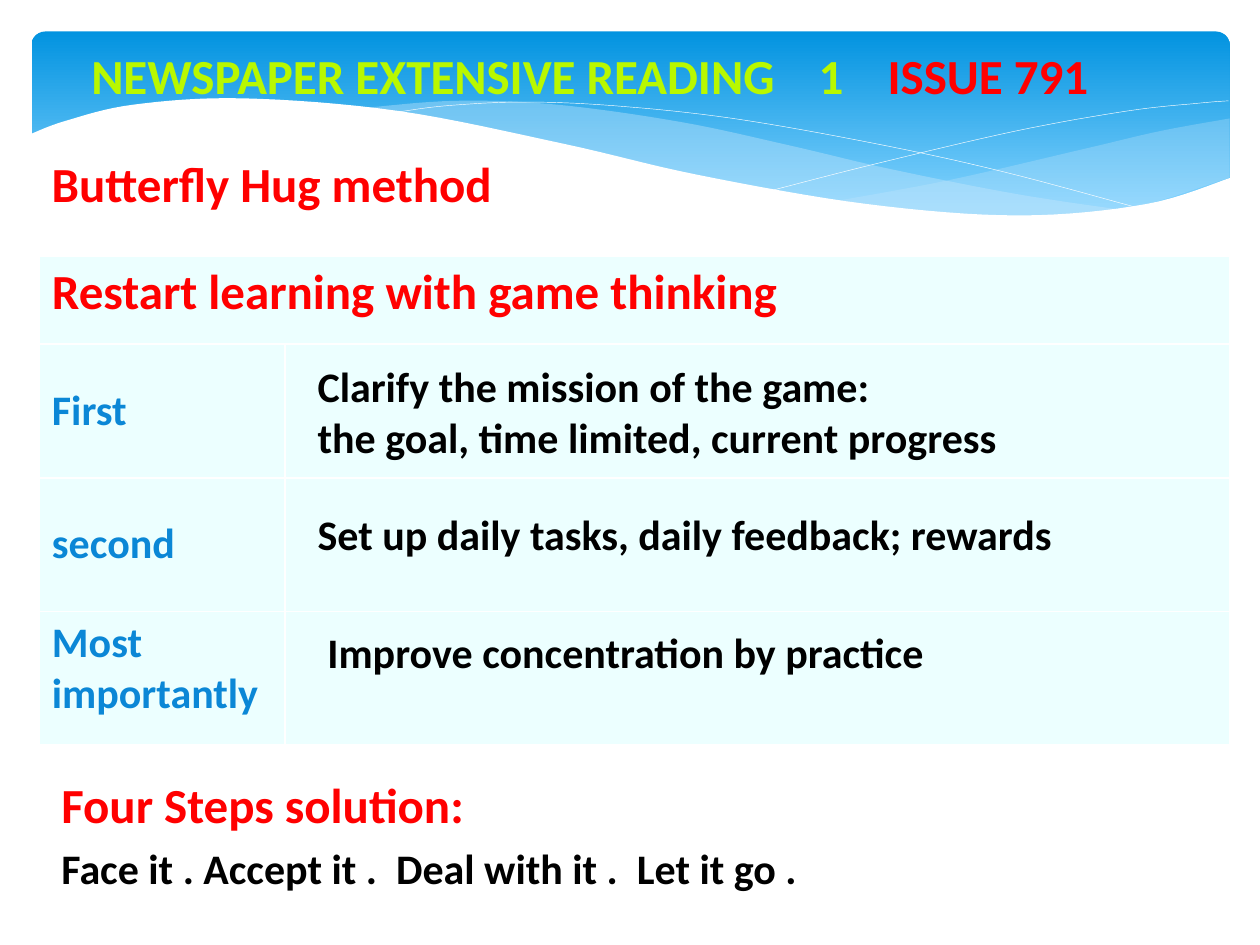
from dataclasses import dataclass

from lxml.etree import SubElement
from pptx import Presentation
from pptx.dml.color import RGBColor
from pptx.enum.shapes import MSO_SHAPE
from pptx.enum.text import MSO_ANCHOR, PP_ALIGN
from pptx.oxml import parse_xml
from pptx.oxml.ns import nsdecls, qn
from pptx.util import Pt


@dataclass(frozen=True)
class Theme:
    font: str = "Calibri"
    heading: int = 28
    body: int = 24
    red: str = "FF0000"
    lime: str = "B9F800"
    blue: str = "0B87D6"
    black: str = "000000"
    white: str = "FFFFFF"
    sky_top: str = "0293E0"
    sky_bottom: str = "83D3FE"
    wave: str = "C6E7FC"
    cell: str = "CCFFFF"


THEME = Theme()

# Knots of the banner's curves, in points
FAR_TOP = [(702.7, 67.7), (663, 74.9), (620, 85), (542, 103), (476, 115.2)]
FAR_BOTTOM = [(476, 115.2), (527, 121), (586, 123.8), (646, 118.8), (702.7, 101.5)]
MIDDLE_TOP = [(643, 120.2), (581, 110.9), (508.3, 96.5), (452.9, 83.5),
              (389.5, 69.8), (318.2, 59.8), (260, 57.6), (205.9, 61.9)]
MIDDLE_BOTTOM = [(205.9, 61.9), (260.6, 69.8), (323.3, 83.5), (407.5, 103),
                 (478.8, 115.9), (547.9, 123.1), (596.2, 124.6), (643, 120.2)]
FALLING_LINE = [(222.5, 64.8), (254.2, 60.5), (299.5, 58.3), (352, 60.5),
                (419, 67.7), (500.4, 82.1), (572.4, 97.9), (653, 119.5)]
RISING_LINE = [(441.4, 108.7), (500.4, 93.6), (580.3, 74.9),
               (644.4, 63.4), (684.7, 59), (702, 57.6)]
FRONT_EDGE = [(703.4, 101.5), (655, 116.6), (582.5, 123.1), (495.4, 116.6),
              (399.6, 100.1), (321.8, 82.1), (227.5, 63.4), (139, 56.2),
              (76.3, 59.8), (37.4, 69.1), (16.6, 77)]
FRONT_BASE = [(16.6, 161), (703.4, 161)]


def smooth(knots, steps=8):
    """Points on a Catmull-Rom curve through the knots."""
    ends = [knots[0], *knots, knots[-1]]
    points = []
    for a, b, c, d in zip(ends, ends[1:], ends[2:], ends[3:]):
        for step in range(steps):
            t = step / steps
            points.append(tuple(
                q + t * ((r - p) + t * ((2 * p - 5 * q + 4 * r - s)
                         + t * (3 * q - p - 3 * r + s))) / 2
                for p, q, r, s in zip(a, b, c, d)))
    return points + [knots[-1]]


def set_fill(fill, color, opacity=100):
    fill.solid()
    fill.fore_color.rgb = RGBColor.from_string(color)
    if opacity < 100:
        # The colour element is the last one in its parent's solid fill
        color_element = fill._xPr.find(qn("a:solidFill"))[0]
        SubElement(color_element, qn("a:alpha"), val=str(opacity * 1000))


def add_curve(page, points, fill=None, opacity=100, line=None):
    corners = [(Pt(x), Pt(y)) for x, y in points]
    builder = page.shapes.build_freeform(*corners[0], scale=1.0)
    builder.add_line_segments(corners[1:], close=fill is not None)
    curve = builder.convert_to_shape()
    curve.shadow.inherit = False
    if fill:
        set_fill(curve.fill, fill, opacity)
    else:
        curve.fill.background()
    if line:
        curve.line.color.rgb = RGBColor.from_string(line)
        curve.line.width = Pt(0.25)
    else:
        curve.line.fill.background()


def add_banner(page):
    sky = page.shapes.add_shape(MSO_SHAPE.ROUNDED_RECTANGLE,
                                Pt(18), Pt(18), Pt(684.7), Pt(112.3))
    sky.adjustments[0] = 0.07
    sky.shadow.inherit = False
    sky.line.fill.background()
    sky.fill.gradient()
    sky.fill.gradient_angle = 270
    stops = zip(sky.fill.gradient_stops, (THEME.sky_top, THEME.sky_bottom), (0, 0.9))
    for stop, color, position in stops:
        stop.color.rgb = RGBColor.from_string(color)
        stop.position = position

    add_curve(page, smooth(FAR_TOP) + smooth(FAR_BOTTOM), fill=THEME.wave, opacity=29)
    add_curve(page, smooth(MIDDLE_TOP) + smooth(MIDDLE_BOTTOM), fill=THEME.wave, opacity=40)
    add_curve(page, smooth(FALLING_LINE), line=THEME.white)
    add_curve(page, smooth(RISING_LINE), line=THEME.white)
    add_curve(page, smooth(FRONT_EDGE) + FRONT_BASE, fill=THEME.white)


def write(para, text, size=THEME.body, color=THEME.black):
    span = para.add_run()
    span.text = text
    span.font.name = THEME.font
    span.font.size = Pt(size)
    span.font.bold = True
    span.font.color.rgb = RGBColor.from_string(color)


def add_text(page, left, top, width, height, *lines, align=PP_ALIGN.LEFT,
             spacing=None, **style):
    """Add a text box; each line is a text or a list of (text, colour) pairs."""
    box = page.shapes.add_textbox(Pt(left), Pt(top), Pt(width), Pt(height))
    frame = box.text_frame
    frame.word_wrap = True
    for number, line in enumerate(lines):
        para = frame.add_paragraph() if number else frame.paragraphs[0]
        para.alignment = align
        para.line_spacing = spacing
        if isinstance(line, str):
            write(para, line, **style)
        else:
            for text, color in line:
                write(para, text, color=color, **style)


def format_cell(cell):
    set_fill(cell.fill, THEME.cell, opacity=36)
    properties = cell._tc.get_or_add_tcPr()
    for index, side in enumerate(("lnL", "lnR", "lnT", "lnB")):
        properties.insert(index, parse_xml(
            f'<a:{side} {nsdecls("a")} w="12700"><a:solidFill>'
            f'<a:srgbClr val="{THEME.white}"/></a:solidFill></a:{side}>'))


def add_steps_table(page):
    labels = ["First", "second", "Most importantly"]
    frame = page.shapes.add_table(len(labels) + 1, 2, Pt(22.5), Pt(146.5),
                                  Pt(680.4), Pt(279))
    table = frame.table
    table.first_row = table.horz_banding = False
    for column, width in zip(table.columns, (140.4, 540)):
        column.width = Pt(width)
    for row, height in zip(table.rows, [50.2] + [76.4] * len(labels)):
        row.height = Pt(height)
    for cell in table.iter_cells():
        format_cell(cell)

    heading = table.cell(0, 0)
    heading.merge(table.cell(0, 1))
    write(heading.text_frame.paragraphs[0], "Restart learning with game thinking",
          size=THEME.heading, color=THEME.red)
    for number, label in enumerate(labels, start=1):
        cell = table.cell(number, 0)
        if number < len(labels):
            cell.vertical_anchor = MSO_ANCHOR.MIDDLE
        write(cell.text_frame.paragraphs[0], label, color=THEME.blue)


def main():
    deck = Presentation()
    deck.slide_width, deck.slide_height = Pt(720), Pt(540)
    page = deck.slides.add_slide(deck.slide_layouts[6])
    section = {"size": THEME.heading, "color": THEME.red, "spacing": 1.5}

    # Banner and title
    add_banner(page)
    add_text(page, 11, 22.5, 652, 41,
             [("NEWSPAPER EXTENSIVE READING    1    ", THEME.lime),
              ("ISSUE 791", THEME.red)],
             align=PP_ALIGN.CENTER, size=THEME.heading)

    # Table of steps, with the details laid over its right column
    add_steps_table(page)
    add_text(page, 174.4, 202.5, 506, 65.4, "Clarify the mission of the game:",
             "the goal, time limited, current progress")
    add_text(page, 174.4, 286.9, 506, 36, "Set up daily tasks, daily feedback; rewards")
    add_text(page, 180, 354.4, 506, 36, "Improve concentration by practice")

    # Section headings and closing line
    add_text(page, 28, 422, 366, 58, "Four Steps solution:", **section)
    add_text(page, 28, 478, 506, 36, "Face it . Accept it .  Deal with it .  Let it go .")
    add_text(page, 22.5, 67.5, 366, 52.5, "Butterfly Hug method", **section)

    deck.save("out.pptx")


if __name__ == "__main__":
    main()
